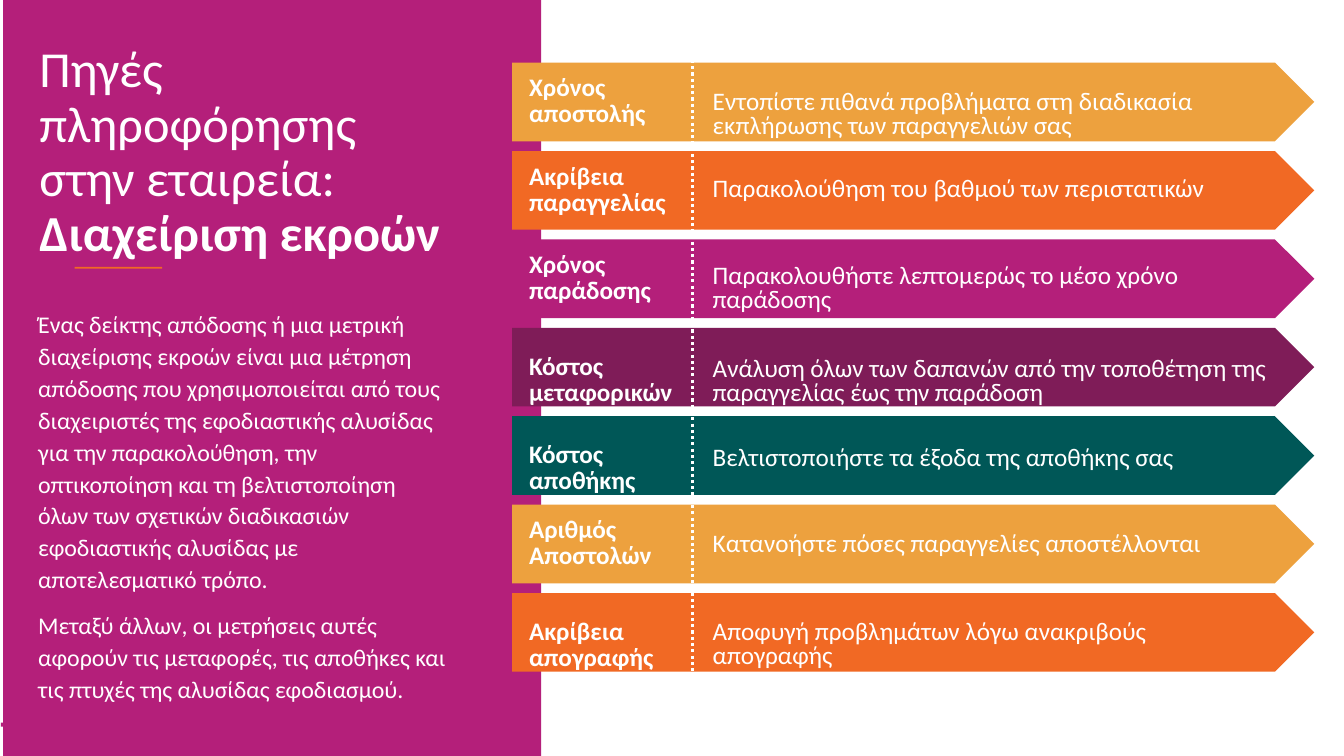
from dataclasses import dataclass
from typing import NamedTuple

from lxml.etree import SubElement
from pptx import Presentation
from pptx.dml.color import RGBColor as RGB
from pptx.enum.dml import MSO_LINE
from pptx.enum.shapes import MSO_CONNECTOR, MSO_SHAPE as SHAPE
from pptx.enum.text import MSO_ANCHOR as ANCHOR, MSO_AUTO_SIZE as FIT, PP_ALIGN as ALIGN
from pptx.oxml.ns import qn
from pptx.util import Pt


@dataclass(frozen=True)
class Theme:
    font: str = "Calibri"
    white: RGB = RGB(0xFF, 0xFF, 0xFF)
    magenta: RGB = RGB(0xB4, 0x1F, 0x7A)
    amber: RGB = RGB(0xED, 0xA1, 0x3E)
    orange: RGB = RGB(0xF1, 0x69, 0x24)
    plum: RGB = RGB(0x7F, 0x1C, 0x58)
    teal: RGB = RGB(0x00, 0x57, 0x57)
    title_size: float = 36
    metric_size: float = 18
    intro_size: float = 17.1


THEME = Theme()


class Metric(NamedTuple):
    name: tuple
    benefit: str
    color: RGB
    name_drop: float      # extra distance below the arrow's middle
    benefit_drop: float   # distance below the arrow's top
    benefit_width: float


NARROW, WIDE = 382.3, 406

METRICS = [
    Metric(("Χρόνος", "αποστολής"),
           "Εντοπίστε πιθανά προβλήματα στη διαδικασία εκπλήρωσης των παραγγελιών σας",
           THEME.amber, 0, 19.4, WIDE),
    Metric(("Ακρίβεια", "παραγγελίας"),
           "Παρακολούθηση του βαθμού των περιστατικών",
           THEME.orange, 0, 18.2, NARROW),
    Metric(("Χρόνος", "παράδοσης"),
           "Παρακολουθήστε λεπτομερώς το μέσο χρόνο παράδοσης",
           THEME.magenta, 0, 17.2, NARROW),
    Metric(("Κόστος", "μεταφορικών"),
           "Ανάλυση όλων των δαπανών από την τοποθέτηση της παραγγελίας έως την παράδοση",
           THEME.plum, 9.3, 20.8, WIDE),
    Metric(("Κόστος", "αποθήκης"),
           "Βελτιστοποιήστε τα έξοδα της αποθήκης σας",
           THEME.teal, 9.3, 20.8, NARROW),
    Metric(("Αριθμός", "Αποστολών"),
           "Κατανοήστε πόσες παραγγελίες αποστέλλονται",
           THEME.amber, 0, 19.4, NARROW),
    Metric(("Ακρίβεια", "απογραφής"),
           "Αποφυγή προβλημάτων λόγω ανακριβούς απογραφής",
           THEME.orange, 9.3, 19.4, NARROW),
]

INTRO = [
    "Ένας δείκτης απόδοσης ή μια μετρική διαχείρισης εκροών είναι μια μέτρηση "
    "απόδοσης που χρησιμοποιείται από τους διαχειριστές της εφοδιαστικής αλυσίδας "
    "για την παρακολούθηση, την οπτικοποίηση και τη βελτιστοποίηση όλων των σχετικών "
    "διαδικασιών εφοδιαστικής αλυσίδας με αποτελεσματικό τρόπο.",
    "Μεταξύ άλλων, οι μετρήσεις αυτές αφορούν τις μεταφορές, τις αποθήκες και τις "
    "πτυχές της αλυσίδας εφοδιασμού.",
]

ARROW_LEFT, ARROW_TOP, ARROW_WIDTH, ARROW_HEIGHT = 365.8, 44.7, 573, 56.2
ARROW_PITCH = 63.15
NAME_LEFT, NAME_WIDTH, NAME_HEIGHT = 370.8, 120, 45.2
BENEFIT_LEFT, BENEFIT_HEIGHT = 506.2, 20
DIVIDER_X, DIVIDER_TOP, DIVIDER_BOTTOM = 494.6, 33.8, 493.2


def add_block(slide, kind, left, top, width, height, color):
    block = slide.shapes.add_shape(kind, Pt(left), Pt(top), Pt(width), Pt(height))
    block.shadow.inherit = False
    block.fill.solid()
    block.fill.fore_color.rgb = color
    block.line.fill.background()


def add_run(paragraph, text, size, bold=False):
    run = paragraph.add_run()
    run.text = text
    run.font.name = THEME.font
    run.font.size = Pt(size)
    run.font.bold = bold
    run.font.color.rgb = THEME.white


def add_text(slide, left, top, width, height, lines, size, leading,
             bold=False, gap=0, anchor=ANCHOR.TOP, insets=(7.2, 3.6)):
    box = slide.shapes.add_textbox(Pt(left), Pt(top), Pt(width), Pt(height))
    frame = box.text_frame
    frame.word_wrap = True
    frame.vertical_anchor = anchor
    frame.margin_left = frame.margin_right = Pt(insets[0])
    frame.margin_top = frame.margin_bottom = Pt(insets[1])
    for index, line in enumerate(lines):
        paragraph = frame.add_paragraph() if index else frame.paragraphs[0]
        paragraph.line_spacing = Pt(leading)
        if index and gap:
            paragraph.space_before = Pt(gap)
        add_run(paragraph, line, size, bold)


def place_title(slide):
    title = slide.shapes.title
    title.left, title.top, title.width, title.height = Pt(20.9), Pt(28.1), Pt(303.8), Pt(160)
    frame = title.text_frame
    frame.auto_size = FIT.NONE
    frame.word_wrap = True
    frame.vertical_anchor = ANCHOR.TOP
    heading = frame.paragraphs[0]
    heading.alignment = ALIGN.LEFT
    heading.line_spacing = 0.9
    add_run(heading, "Πηγές πληροφόρησης στην εταιρεία: ", THEME.title_size)
    add_run(heading, "Διαχείριση εκροών", THEME.title_size, bold=True)
    # Bring the title in front of the coloured panel
    title.element.getparent().append(title.element)


def add_metric(slide, row, metric):
    top = ARROW_TOP + row * ARROW_PITCH
    add_block(slide, SHAPE.PENTAGON, ARROW_LEFT, top, ARROW_WIDTH, ARROW_HEIGHT, metric.color)
    name_top = top + (ARROW_HEIGHT - NAME_HEIGHT) / 2 + metric.name_drop
    add_text(slide, NAME_LEFT, name_top, NAME_WIDTH, NAME_HEIGHT, metric.name,
             THEME.metric_size, 18.6, bold=True, anchor=ANCHOR.MIDDLE)
    add_text(slide, BENEFIT_LEFT, top + metric.benefit_drop, metric.benefit_width,
             BENEFIT_HEIGHT, [metric.benefit], THEME.metric_size, 17.1, insets=(2.9, 1.4))


def add_divider(slide):
    divider = slide.shapes.add_connector(MSO_CONNECTOR.STRAIGHT, Pt(DIVIDER_X), Pt(DIVIDER_TOP),
                                         Pt(DIVIDER_X), Pt(DIVIDER_BOTTOM))
    divider.line.color.rgb = THEME.white
    divider.line.width = Pt(2.25)
    divider.line.dash_style = MSO_LINE.ROUND_DOT
    SubElement(divider.element.spPr, qn("a:effectLst"))


def main():
    deck = Presentation()
    deck.slide_width, deck.slide_height = Pt(960), Pt(540)
    slide = deck.slides.add_slide(deck.slide_layouts[5])

    # Left panel with title, accent rule and introduction
    add_block(slide, SHAPE.RECTANGLE, 0.7, 516.2, 62.6, 2.9, THEME.magenta)
    add_block(slide, SHAPE.RECTANGLE, 2.2, 0, 384.4, 540, THEME.magenta)
    place_title(slide)
    add_block(slide, SHAPE.RECTANGLE, 53.3, 190.6, 62.6, 1.4, THEME.orange)
    add_text(slide, 20.2, 215.3, 306.7, 296.6, INTRO, THEME.intro_size, 22.8, gap=10)

    # Metric arrows, split by one dotted line
    for row, metric in enumerate(METRICS):
        add_metric(slide, row, metric)
    add_divider(slide)

    deck.save("out.pptx")


if __name__ == "__main__":
    main()
